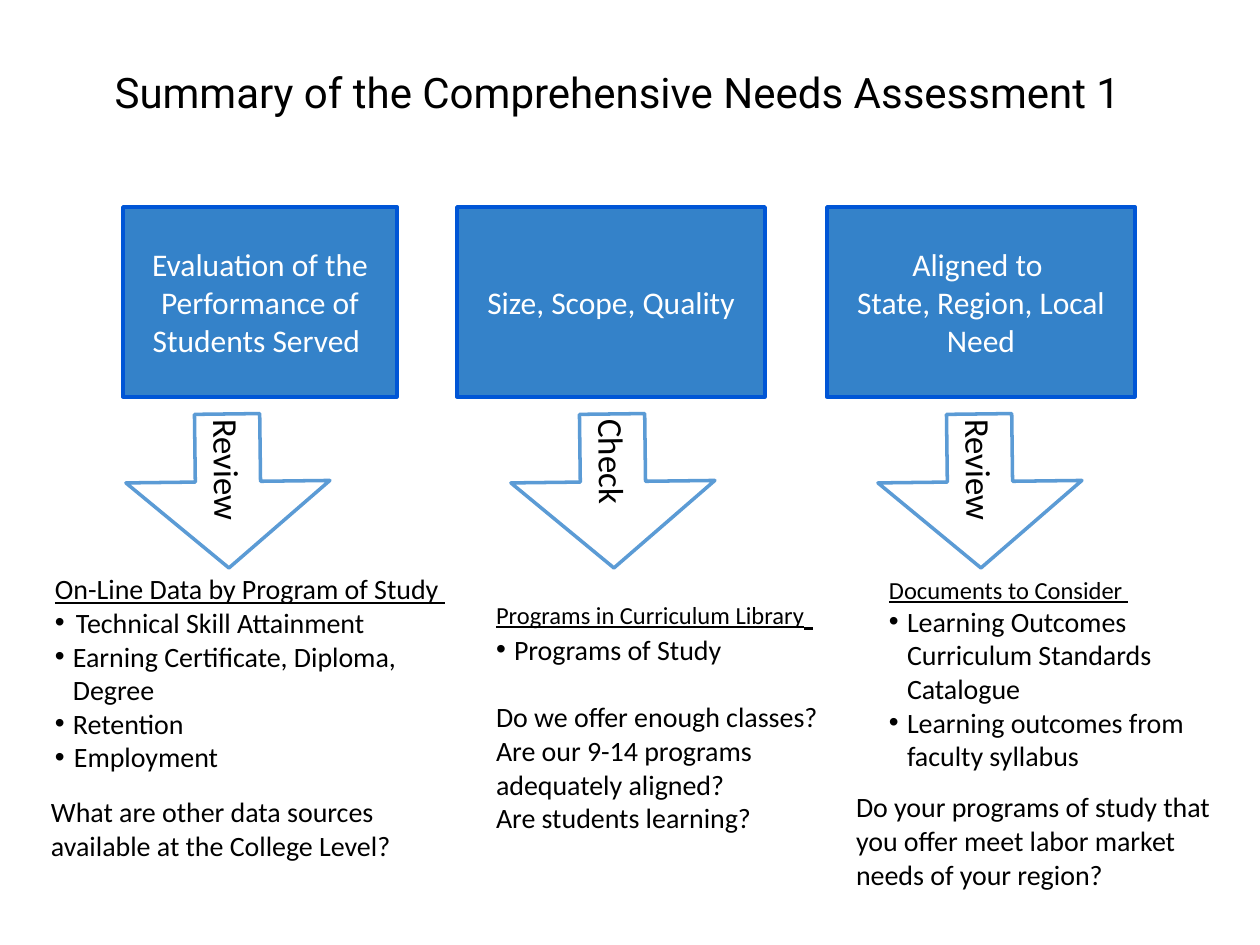
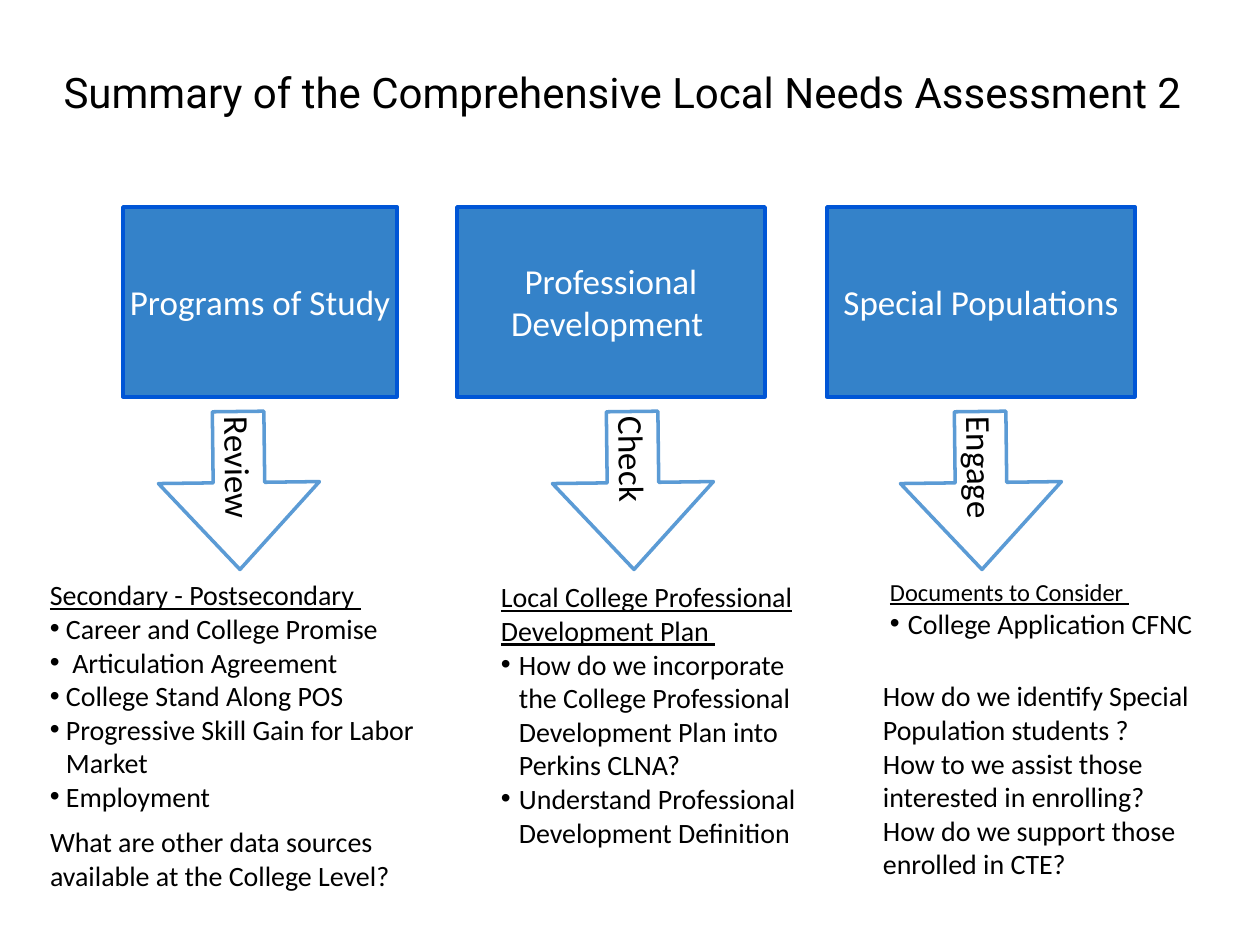
"""Build two slides that summarise the needs assessment."""
from lxml import etree
from pptx import Presentation
from pptx.dml.color import RGBColor
from pptx.enum.shapes import MSO_SHAPE
from pptx.enum.text import MSO_ANCHOR, MSO_AUTO_SIZE, PP_ALIGN
from pptx.oxml.ns import qn
from pptx.util import Pt

RECT, ARROW = MSO_SHAPE.RECTANGLE, MSO_SHAPE.RIGHT_ARROW
TOP, MIDDLE = MSO_ANCHOR.TOP, MSO_ANCHOR.MIDDLE
LEFT, CENTER = PP_ALIGN.LEFT, PP_ALIGN.CENTER
FIXED = MSO_AUTO_SIZE.NONE
SCALE = 914400 / 126
INK = {"text": "000000", "white": "FFFFFF", "box": "3482C9",
       "edge": "0056D6", "arrow": "5B9BD5"}
BOXES = [(123, 274), (457, 308), (827, 308)]

SLIDES = [
    {
        "title": "Summary of the Comprehensive Needs Assessment 1",
        "width": 1235,
        "size": 18,
        "boxes": [["Evaluation of the Performance of Students Served "],
                  ["Size, Scope, Quality"],
                  ["Aligned to ", "State, Region, Local", "Need"]],
        "arrow": (389, 154, 204, 0.56),
        "steps": [(151, "Review"), (536, "Check"), (903, "Review")],
        "notes": [
            ((50, 567, 418, 213), ("On-Line Data by Program of Study ", 16),
             [("Technical Skill Attainment", 21),
              ("Earning Certificate, Diploma, Degree", 18),
              ("Retention", 18), ("Employment", 19)], []),
            ((491, 581, 336, 260), ("Programs in Curriculum Library", 14),
             [("Programs of Study", 18)],
             ["Do we offer enough classes?",
              "Are our 9-14 programs adequately aligned?",
              "Are students learning?"]),
            ((884, 570, 370, 209), ("Documents to Consider ", 14),
             [("Learning Outcomes Curriculum Standards Catalogue", 18),
              ("Learning outcomes from faculty syllabus", 18)], []),
            ((46, 790, 358, 78), None, [],
             ["What are other data sources available at the College Level?"]),
            ((851, 785, 373, 112), None, [],
             ["Do your programs of study that you offer meet labor market "
              "needs of your region?"]),
        ],
    },
    {
        "title": "Summary of the Comprehensive Local Needs Assessment 2",
        "width": 1245,
        "size": 20,
        "boxes": [["Programs of Study "], ["Professional Development "],
                  ["Special Populations"]],
        "arrow": (410, 158, 161, 0.55),
        "steps": [(160, "Review"), (554, "Check"), (902, "Engage")],
        "notes": [
            ((45, 573, 430, 247), ("Secondary - Postsecondary ", 16),
             [("Career and College Promise", 16),
              (" Articulation Agreement", 16),
              ("College Stand Along POS", 16),
              ("Progressive Skill Gain for Labor Market", 16),
              ("Employment", 16)], []),
            ((496, 575, 314, 281),
             ("Local College Professional Development Plan ", 16),
             [("How do we incorporate the College Professional Development "
               "Plan into Perkins CLNA?", 18),
              ("Understand Professional Development Definition", 18)], []),
            ((885, 572, 370, 73), ("Documents to Consider ", 14),
             [("College Application CFNC", 18)], []),
            ((45, 820, 358, 78), None, [],
             ["What are other data sources available at the College Level?"]),
            ((878, 674, 355, 213), None, [],
             ["How do we identify Special Population students ?",
              "How to we assist those interested in enrolling?",
              "How do we support those enrolled in CTE?"]),
        ],
    },
]


def px(*vals):
    """Turn pixels into EMU."""
    return [round(val * SCALE) for val in vals]


def write(frame, rows, align=LEFT, ink="text", anchor=TOP, font="Calibri"):
    """Fill a frame with rows of runs, indent and space before."""
    frame.word_wrap = True
    frame.auto_size = FIXED
    frame.vertical_anchor = anchor
    if font == "Calibri":
        (frame.margin_left, frame.margin_right,
         frame.margin_top, frame.margin_bottom) = px(5, 5, 5, 5)
    for num, (runs, dent, gap) in enumerate(rows):
        para = frame.add_paragraph() if num else frame.paragraphs[0]
        para.alignment = align
        if dent:
            props = para._p.get_or_add_pPr()
            props.set("marL", str(px(dent)[0]))
            props.set("indent", str(-px(dent)[0]))
            etree.SubElement(props, qn("a:buFont")).set("typeface", "Arial")
            etree.SubElement(props, qn("a:buChar")).set("char", "•")
        if gap:
            para.space_before = Pt(gap)
        for text, size, under in runs:
            run = para.add_run()
            run.text = text
            run.font.name = font
            run.font.size = Pt(size)
            run.font.underline = under
            run.font.color.rgb = RGBColor.from_string(INK[ink])


deck = Presentation()
deck.slide_width, deck.slide_height = px(1260, 945)

for data in SLIDES:
    slide = deck.slides.add_slide(deck.slide_layouts[5])
    shapes = slide.shapes
    title = shapes.title
    title.left, title.top, title.width, title.height = px(
        0, 66, data["width"], 86)
    write(title.text_frame, [([(data["title"], 24, False)], 0, 0)],
          CENTER, font="Roboto")
    title.text_frame.paragraphs[0].line_spacing = 0.9

    top, long, wide, head = data["arrow"]
    parts = []
    for (left, width), lines in zip(BOXES, data["boxes"]):
        rows = [([(line, data["size"], False)], 0, 0) for line in lines]
        parts.append((RECT, (left, 207, width, 190), "box", "edge",
                      rows, CENTER, "white"))
    for left, word in data["steps"]:
        rows = [([(word, 20, False)], 0, 0)]
        parts.append((ARROW, (left, top, long, wide), "white", "arrow",
                      rows, LEFT, "text"))
    for kind, place, fill, edge, rows, align, ink in parts:
        shape = shapes.add_shape(kind, *px(*place))
        shape.shadow.inherit = False
        shape.fill.solid()
        shape.fill.fore_color.rgb = RGBColor.from_string(INK[fill])
        shape.line.color.rgb = RGBColor.from_string(INK[edge])
        shape.line.width = Pt(2)
        if kind == ARROW:
            shape.rotation = 89.3
            shape.adjustments[0] = 0.32
            shape.adjustments[1] = head
        write(shape.text_frame, rows, align, ink, MIDDLE)

    for place, head, items, asks in data["notes"]:
        rows = []
        if head:
            runs = [(*head, True)]
            if asks:
                runs.append((" ", 22, True))
            rows.append((runs, 0, 0))
        rows += [([(item, 16, False)], dent, 0) for item, dent in items]
        for num, ask in enumerate(asks):
            gap = 19.5 if head and num == 0 else 0
            rows.append(([(ask, 16, False)], 0, gap))
        write(shapes.add_textbox(*px(*place)).text_frame, rows)

deck.save("out.pptx")
